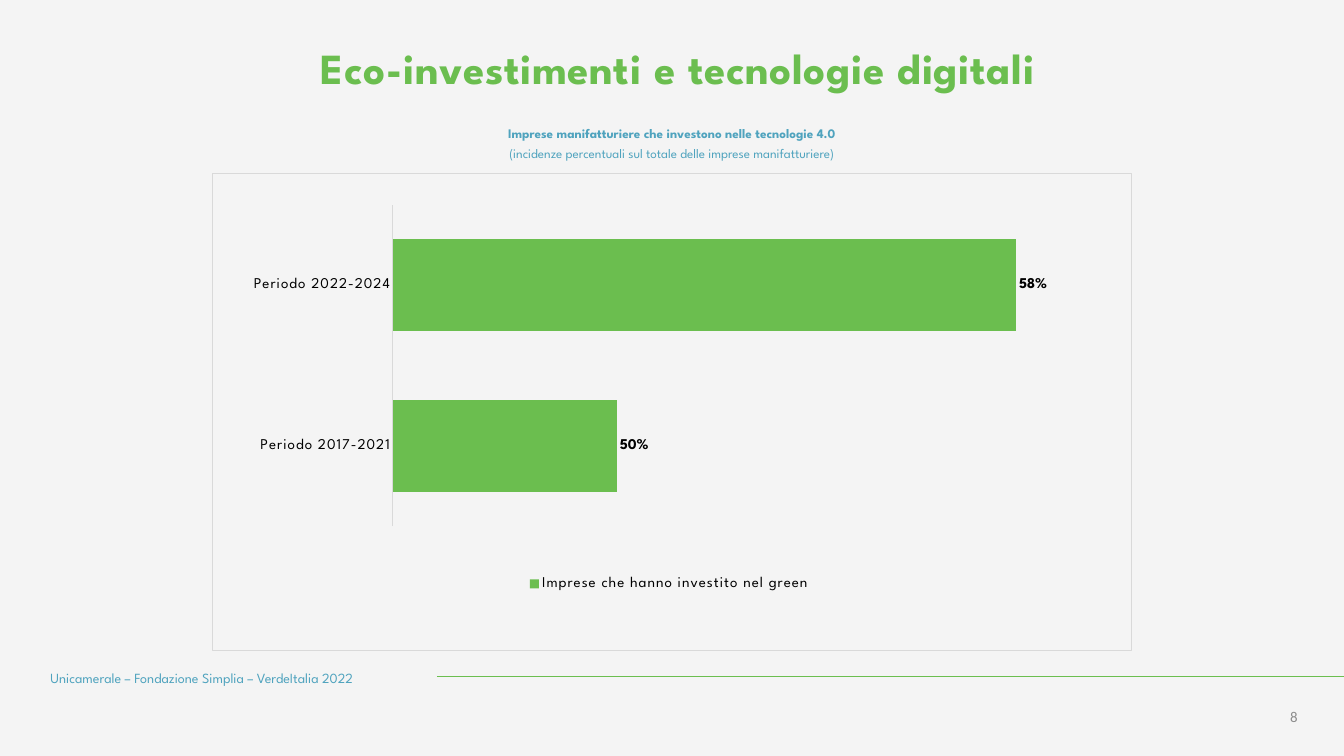
from lxml import etree
from pptx import Presentation, util as u
from pptx.chart.data import CategoryChartData
from pptx.dml.color import RGBColor
from pptx.enum import chart as ch, shapes, text as tx
from pptx.oxml import parse_xml
from pptx.oxml.ns import nsdecls, qn

HEX = {"back": "F4F4F4", "green": "6BBE4F", "blue": "4FA3BE",
       "black": "000000", "rule": "D9D9D9", "grey": "8C8C8C"}
HEAD = "League Spartan"
WIDE, HIGH = u.Inches(20), u.Inches(11.25)
CELL = WIDE / 20  # the grid has square cells, 20 across


def grid(*cells):
    return [u.Emu(int(n * CELL)) for n in cells]


def tint(name):
    return RGBColor.from_string(HEX[name])


def style(font, size, color, bold=False, face=HEAD, gap=0):
    """Format a font; gap is the letter spacing in points."""
    font.size, font.bold, font.name = u.Pt(size), bold, face
    font.color.rgb = tint(color)
    if gap:
        font._rPr.set("spc", str(int(gap * 100)))


def label(slide, box, lines, size, color, bolds=(False,), align="LEFT",
          lead=None, face=HEAD, gap=0, pad=0):
    """Add a text box; bolds holds one flag for each line."""
    frame = slide.shapes.add_textbox(*grid(*box)).text_frame
    frame.word_wrap = True
    frame.vertical_anchor = tx.MSO_ANCHOR.MIDDLE if pad else tx.MSO_ANCHOR.TOP
    frame.margin_left = frame.margin_right = u.Inches(pad)
    frame.margin_top = frame.margin_bottom = u.Inches(pad / 2)
    if not pad:
        frame.auto_size = tx.MSO_AUTO_SIZE.SHAPE_TO_FIT_TEXT
    frame.text = "\n".join(lines)
    for para, bold in zip(frame.paragraphs, bolds):
        para.alignment = getattr(tx.PP_ALIGN, align)
        if lead:
            para.line_spacing = u.Pt(lead)
        style(para.runs[0].font, size, color, bold, face, gap)


def rule(slide, left, right, row):
    line = slide.shapes.add_connector(
        shapes.MSO_CONNECTOR.STRAIGHT, *grid(left, row, right, row))
    line.line.color.rgb = tint("green")
    line.line.width = u.Pt(0.75)
    etree.SubElement(line._element.spPr, qn("a:effectLst"))


def layout(inner=False, **share):
    """Build a manual chart layout from shares of the chart's size."""
    target = '<c:layoutTarget val="inner"/>' if inner else ""
    modes = "".join(f'<c:{k}Mode val="edge"/>' for k in "xy")
    sizes = "".join(f'<c:{k} val="{v}"/>' for k, v in share.items())
    return parse_xml(f'<c:layout {nsdecls("c")}><c:manualLayout>{target}'
                     f'{modes}{sizes}</c:manualLayout></c:layout>')


def frame_chart(chart):
    """Give the chart its border and place its plot and legend."""
    root = chart._chartSpace
    border = parse_xml(
        f'<c:spPr {nsdecls("c", "a")}><a:noFill/><a:ln w="9525"><a:solidFill>'
        f'<a:srgbClr val="{HEX["rule"]}"/></a:solidFill></a:ln></c:spPr>')
    root.find(qn("c:chart")).addnext(border)
    area = root.find(".//" + qn("c:plotArea"))
    legend = chart.legend._element
    for part in (area, legend):
        for old in part.findall(qn("c:layout")):
            part.remove(old)
    area.insert(0, layout(True, x=0.196, y=0.065, w=0.804, h=0.675))
    legend.find(qn("c:legendPos")).addnext(layout(x=0.34, y=0.84))


def bars(slide, box, name, cats, vals):
    data = CategoryChartData(number_format="0%")
    data.categories = cats
    data.add_series(name, vals)
    chart = slide.shapes.add_chart(
        ch.XL_CHART_TYPE.BAR_CLUSTERED, *grid(*box), data).chart
    style(chart.font, 10, "black", face="Calibri")
    chart.has_title = False

    plot = chart.plots[0]
    plot.gap_width, plot.vary_by_categories = 75, False
    fill = plot.series[0].format.fill
    fill.solid()
    fill.fore_color.rgb = tint("green")
    plot.has_data_labels = True
    marks = plot.data_labels
    marks.show_value = True
    marks.number_format, marks.number_format_is_linked = "0%", False
    marks.position = ch.XL_LABEL_POSITION.OUTSIDE_END
    style(marks.font, 16, "black", True)

    axis = chart.category_axis
    axis.major_tick_mark = axis.minor_tick_mark = ch.XL_TICK_MARK.NONE
    axis.format.line.color.rgb = tint("rule")
    axis.format.line.width = u.Pt(0.75)
    style(axis.tick_labels.font, 16, "black", gap=1.2)
    scale = chart.value_axis
    scale.has_major_gridlines = scale.visible = False
    scale.minimum_scale, scale.maximum_scale = 0.455, 0.603

    chart.has_legend = True
    chart.legend.position = ch.XL_LEGEND_POSITION.BOTTOM
    chart.legend.include_in_layout = False
    style(chart.legend.font, 16, "black", gap=1.2)
    frame_chart(chart)


def main():
    deck = Presentation()
    deck.slide_width, deck.slide_height = WIDE, HIGH
    slide = deck.slides.add_slide(deck.slide_layouts[6])
    slide.background.fill.solid()
    slide.background.fill.fore_color.rgb = tint("back")

    label(slide, (0.97, 0.62, 18.25, 0.77),
          ["Eco-investimenti e tecnologie digitali"],
          46, "green", (True,), "CENTER", gap=0.8)
    label(slide, (5.29, 1.81, 9.42, 0.56),
          ["Imprese manifatturiere che investono nelle tecnologie 4.0",
           "(incidenze percentuali sul totale delle imprese manifatturiere)"],
          14, "blue", (True, False), "CENTER", lead=21)
    bars(slide, (3.16, 2.58, 13.68, 7.1),
         "Imprese che hanno investito nel green",
         ["Periodo 2017-2021", "Periodo 2022-2024"], [0.5, 0.58])
    label(slide, (0.75, 9.92, 5.55, 0.27),
          ["Unicamerale – Fondazione Simplia – VerdeItalia 2022"],
          15, "blue", lead=21)
    rule(slide, 6.5, 20, 10.07)
    label(slide, (17.08, 10.46, 2.33, 0.4), ["8"], 16, "grey",
          align="RIGHT", face="Calibri", pad=0.1)
    deck.save("out.pptx")


if __name__ == "__main__":
    main()
